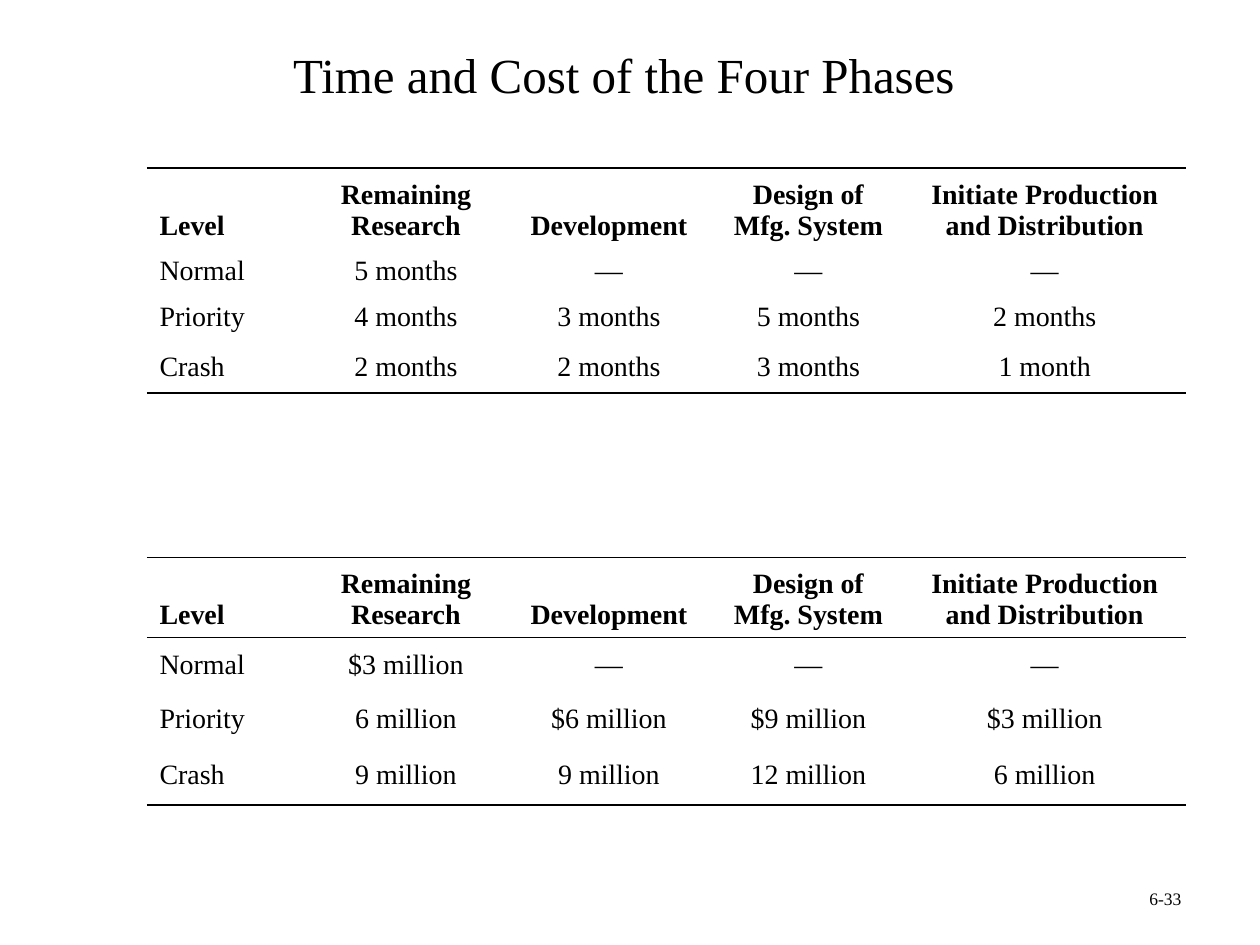
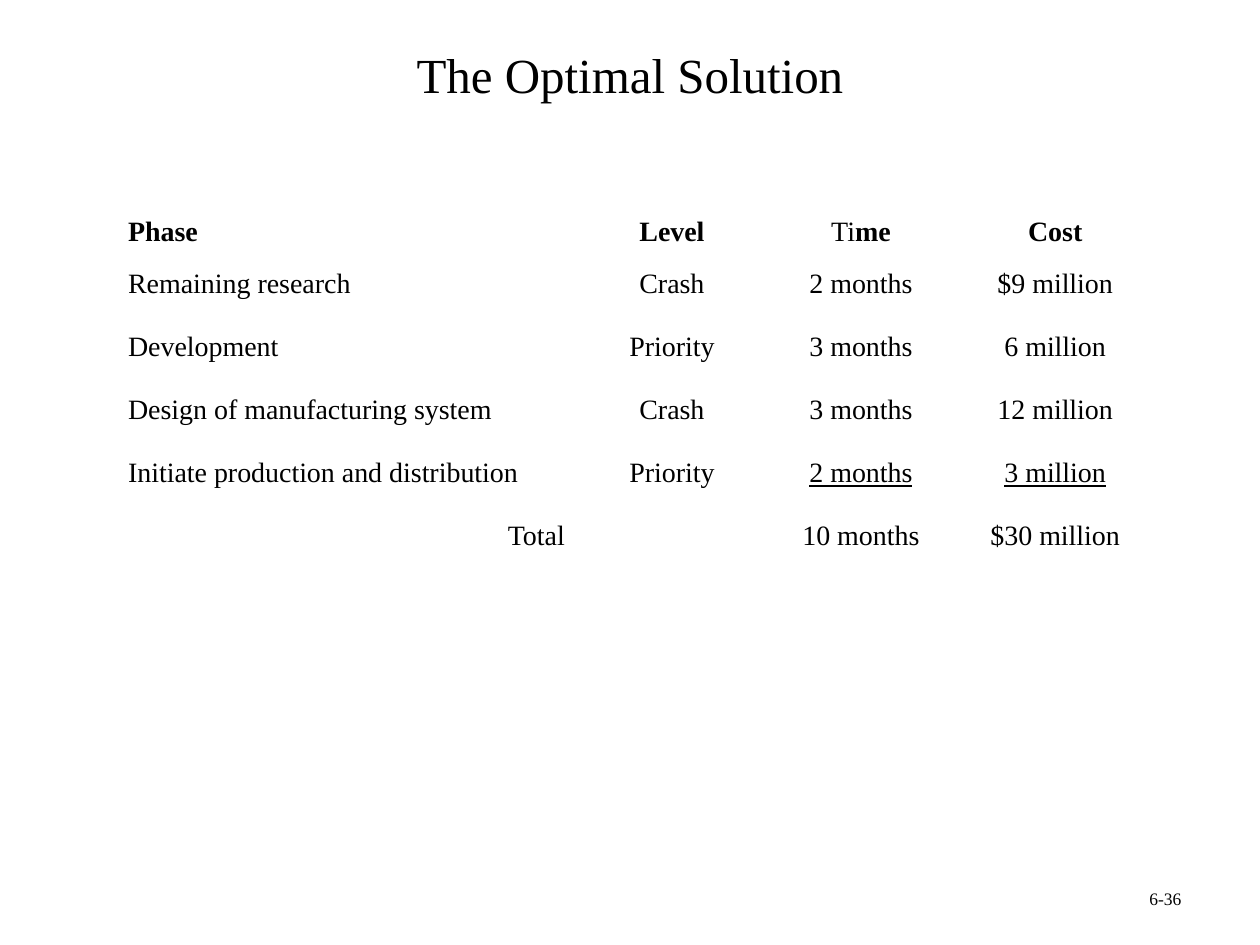
from lxml import etree
from pptx import Presentation
from pptx import util as u
from pptx.dml.color import RGBColor
from pptx.enum import text
from pptx.oxml.ns import qn

COLORS = {"ink": "000000", "paper": "FFFFFF"}
FONT = "Times New Roman"
PLAIN_TABLE = "{2D5ABB26-0587-4C30-8999-92F81FD0307C}"
LEFT, CENTER, RIGHT = text.PP_ALIGN.LEFT, text.PP_ALIGN.CENTER, text.PP_ALIGN.RIGHT
TOP, MIDDLE, BOTTOM = text.MSO_ANCHOR.TOP, text.MSO_ANCHOR.MIDDLE, text.MSO_ANCHOR.BOTTOM

PHASES = ["Level", "Remaining\nResearch", "Development",
          "Design of\nMfg. System", "Initiate Production\nand Distribution"]
TIMES = [
    ["Normal", "5 months", "—", "—", "—"],
    ["Priority", "4 months", "3 months", "5 months", "2 months"],
    ["Crash", "2 months", "2 months", "3 months", "1 month"],
]
COSTS = [
    ["Normal", "$3 million", "—", "—", "—"],
    ["Priority", "6 million", "$6 million", "$9 million", "$3 million"],
    ["Crash", "9 million", "9 million", "12 million", "6 million"],
]
SOLUTION = [
    ["Phase", "Level", "Time", "Cost"],
    ["Remaining research", "Crash", "2 months", "$9 million"],
    ["Development", "Priority", "3 months", "6 million"],
    ["Design of manufacturing system", "Crash", "3 months", "12 million"],
    ["Initiate production and distribution", "Priority", "2 months", "3 million"],
    ["Total", "", "10 months", "$30 million"],
]


def style_runs(paragraph, size, bold=False):
    for run in paragraph.runs:
        run.font.name = FONT
        run.font.size = u.Pt(size)
        run.font.bold = bold
        run.font.color.rgb = RGBColor.from_string(COLORS["ink"])


def add_label(slide, wording, left, top, width, height, size, anchor=TOP):
    frame = slide.shapes.add_textbox(
        u.Pt(left), u.Pt(top), u.Pt(width), u.Pt(height)).text_frame
    frame.word_wrap = True
    frame.vertical_anchor = anchor
    caption = frame.paragraphs[0]
    caption.text = wording
    caption.alignment = CENTER
    style_runs(caption, size)


def add_page(deck, title, page_number):
    slide = deck.slides.add_slide(deck.slide_layouts[6])
    slide.background.fill.solid()
    slide.background.fill.fore_color.rgb = RGBColor.from_string(COLORS["paper"])
    add_label(slide, title, 36, 18, 648, 48, 28, MIDDLE)
    add_label(slide, page_number, 630, 504, 72, 24, 10)
    return slide


def fill_cell(cell, wording, align, anchor, bold):
    cell.fill.background()
    cell.vertical_anchor = anchor
    entry = cell.text_frame.paragraphs[0]
    entry.text = wording
    entry.alignment = align
    style_runs(entry, 16, bold)


def add_grid(slide, rows, left, top, widths, heights, headers, header_anchor, body_anchor):
    """Add an unbanded table; headers holds the indexes of its bold rows."""
    grid = slide.shapes.add_table(
        len(heights), len(widths), u.Pt(left), u.Pt(top),
        u.Pt(sum(widths)), u.Pt(sum(heights))).table
    grid.first_row = grid.horz_banding = False
    grid._tbl.tblPr.find(qn("a:tableStyleId")).text = PLAIN_TABLE
    for column, width in zip(grid.columns, widths):
        column.width = u.Pt(width)
    for r, (entries, height) in enumerate(zip(rows, heights)):
        grid.rows[r].height = u.Pt(height)
        is_header = r in headers
        for c, wording in enumerate(entries):
            fill_cell(grid.cell(r, c), wording, CENTER if c else LEFT,
                      header_anchor if is_header else body_anchor, is_header)
    return grid


def rule_row(grid, row, edge):
    """Draw a line along a row; edge is "T" or "B", and B must come before T."""
    for cell in grid.rows[row].cells:
        line = etree.Element(qn(f"a:ln{edge}"), w=str(u.Pt(1)))
        ink = etree.SubElement(line, qn("a:solidFill"))
        etree.SubElement(ink, qn("a:srgbClr"), val=COLORS["ink"])
        cell._tc.get_or_add_tcPr().insert(0, line)


def add_time_and_cost(deck):
    slide = add_page(deck, "Time and Cost of the Four Phases ", "6-33")
    gap = [""] * len(PHASES)
    rows = [PHASES, *TIMES, gap, PHASES, *COSTS]
    heights = [45, 26.5, 26.5, 30, 94, 45, 31.5, 30.5, 34]
    grid = add_grid(slide, rows, 84, 96, [92, 112, 120, 108, 162], heights,
                    {0, 5}, BOTTOM, MIDDLE)
    for row, edge in [(0, "T"), (3, "B"), (4, "B"), (4, "T"), (5, "T"), (8, "B")]:
        rule_row(grid, row, edge)


def add_solution(deck):
    slide = add_page(deck, "The Optimal Solution", "6-36")
    grid = add_grid(slide, SOLUTION, 66, 120, [264, 108, 108, 114],
                    [30, 36, 36, 36, 36, 30], {0}, TOP, TOP)
    time_header = grid.cell(0, 2).text_frame.paragraphs[0]
    time_header.text = "Ti"
    time_header.add_run().text = "me"
    style_runs(time_header, 16)
    time_header.runs[1].font.bold = True
    for column in (2, 3):
        grid.cell(4, column).text_frame.paragraphs[0].runs[0].font.underline = True
    grid.cell(5, 0).text_frame.paragraphs[0].alignment = RIGHT


def main():
    deck = Presentation()
    deck.slide_width, deck.slide_height = u.Pt(720), u.Pt(540)
    add_time_and_cost(deck)
    add_solution(deck)
    deck.save("out.pptx")


if __name__ == "__main__":
    main()
